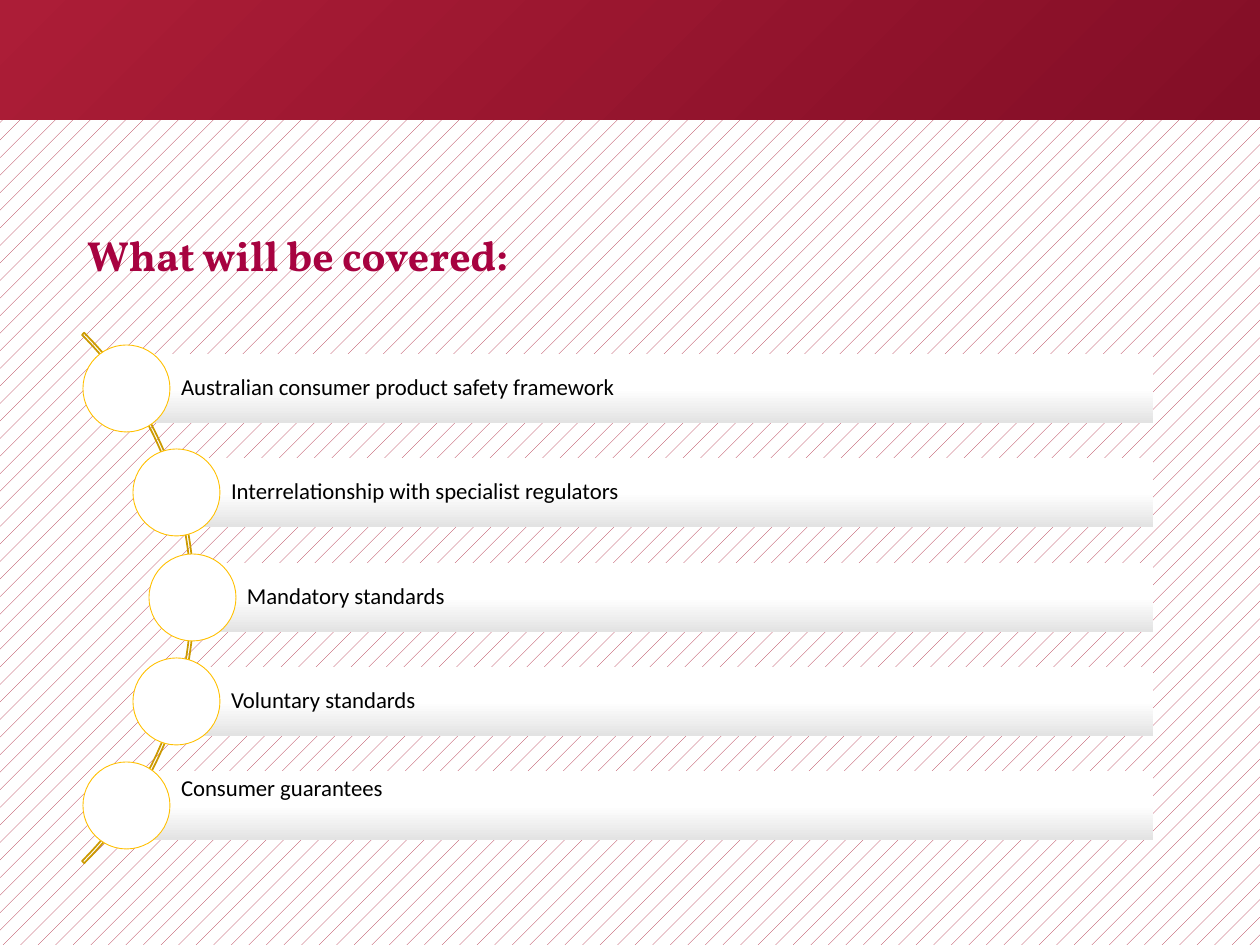
from lxml.etree import SubElement
from pptx import Presentation
from pptx.dml.color import RGBColor
from pptx.enum.dml import MSO_PATTERN
from pptx.enum.shapes import MSO_SHAPE as Shape
from pptx.enum.text import MSO_ANCHOR as Anchor, PP_ALIGN as Align
from pptx.oxml.ns import qn
from pptx.util import Pt

PX = 914400 // 126
WHITE = RGBColor(0xFF, 0xFF, 0xFF)
BLACK = RGBColor(0, 0, 0)
RED = RGBColor(0xAC, 0x1D, 0x37)
DARK_RED = RGBColor(0x83, 0x0E, 0x26)
CRIMSON = RGBColor(0xA7, 0x02, 0x40)
GREY = RGBColor(0xE3, 0xE3, 0xE3)
GOLD = RGBColor(0xFF, 0xC0, 0x00)
DARK_GOLD = RGBColor(0xCC, 0x9A, 0x00)

TITLE = "What will be covered:"
# topic, centre of its circle from the left
TOPICS = [
    ("Australian consumer product safety framework", 126),
    ("Interrelationship with specialist regulators", 176),
    ("Mandatory standards", 192),
    ("Voluntary standards", 176),
    ("Consumer guarantees", 126),
]
FIRST_CENTRE, PITCH = 389, 104.25
BAR_RIGHT, BAR_HEIGHT, CIRCLE = 1153, 69, 87
LAST_LIFT = 32  # the last topic sits above the middle of its bar


def add_shape(page, kind, left, top, width, height, fill=None, line=None, weight=1):
    shape = page.shapes.add_shape(kind, *(n * PX for n in (left, top, width, height)))
    shape.shadow.inherit = False
    if fill is None:
        shape.fill.background()
    else:
        shape.fill.solid()
        shape.fill.fore_color.rgb = fill
    if line is None:
        shape.line.fill.background()
    else:
        shape.line.color.rgb = line
        shape.line.width = Pt(weight)
    return shape


def set_gradient(shape, stops, from_corner=False):
    """Fill top to bottom, or outwards from the top left corner."""
    shape.fill.gradient()
    gradient = shape._element.spPr.find(qn("a:gradFill"))
    for child in list(gradient):
        gradient.remove(child)
    stop_list = SubElement(gradient, qn("a:gsLst"))
    for percent, colour in stops:
        stop = SubElement(stop_list, qn("a:gs"), pos=str(percent * 1000))
        SubElement(stop, qn("a:srgbClr"), val=str(colour))
    if from_corner:
        way = SubElement(gradient, qn("a:path"), path="circle")
        SubElement(way, qn("a:fillToRect"), r="100000", b="100000")
    else:
        SubElement(gradient, qn("a:lin"), ang="5400000", scaled="0")


def write(shape, text, font, size, colour, bold=False, spacing=None, insets=(0, 0, 0, 0)):
    frame = shape.text_frame
    frame.word_wrap = True
    frame.vertical_anchor = Anchor.MIDDLE
    (frame.margin_left, frame.margin_top,
     frame.margin_right, frame.margin_bottom) = (n * PX for n in insets)
    para = frame.paragraphs[0]
    para.alignment = Align.LEFT
    para.line_spacing = spacing
    span = para.add_run()
    span.text = text
    span.font.name = font
    span.font.size = Pt(size)
    span.font.bold = bold
    span.font.color.rgb = colour


def main():
    deck = Presentation()
    deck.slide_width, deck.slide_height = 1260 * PX, 945 * PX
    page = deck.slides.add_slide(deck.slide_layouts[5])

    backdrop = page.background.fill
    backdrop.patterned()
    backdrop.pattern = MSO_PATTERN.PERCENT_5
    backdrop.fore_color.rgb = RED
    backdrop.back_color.rgb = WHITE

    band = add_shape(page, Shape.RECTANGLE, 0, 0, 1260, 120)
    set_gradient(band, [(0, RED), (100, DARK_RED)], from_corner=True)

    title = page.shapes.title
    title.left, title.top, title.width, title.height = (n * PX for n in (87, 199, 1086, 84))
    write(title, TITLE, "Vollkorn", 24, CRIMSON, bold=True, spacing=Pt(45))

    arc = add_shape(page, Shape.BLOCK_ARC, -556, 223, 750, 750, line=DARK_GOLD)
    for i, value in enumerate((189, 27, 0.004)):
        arc.adjustments[i] = value

    for i, (topic, centre_x) in enumerate(TOPICS):
        centre_y = round(FIRST_CENTRE + i * PITCH)
        lift = LAST_LIFT if i == len(TOPICS) - 1 else 0
        bar = add_shape(page, Shape.RECTANGLE, centre_x, centre_y - BAR_HEIGHT // 2 - 1,
                        BAR_RIGHT - centre_x, BAR_HEIGHT)
        set_gradient(bar, [(0, WHITE), (50, WHITE), (100, GREY)])
        write(bar, topic, "Calibri", 13, BLACK, spacing=0.9, insets=(55, 5, 5, 5 + lift))
        add_shape(page, Shape.OVAL, centre_x - CIRCLE // 2, centre_y - CIRCLE // 2 - 1,
                  CIRCLE, CIRCLE, fill=WHITE, line=GOLD, weight=0.5)

    deck.save("out.pptx")


if __name__ == "__main__":
    main()
